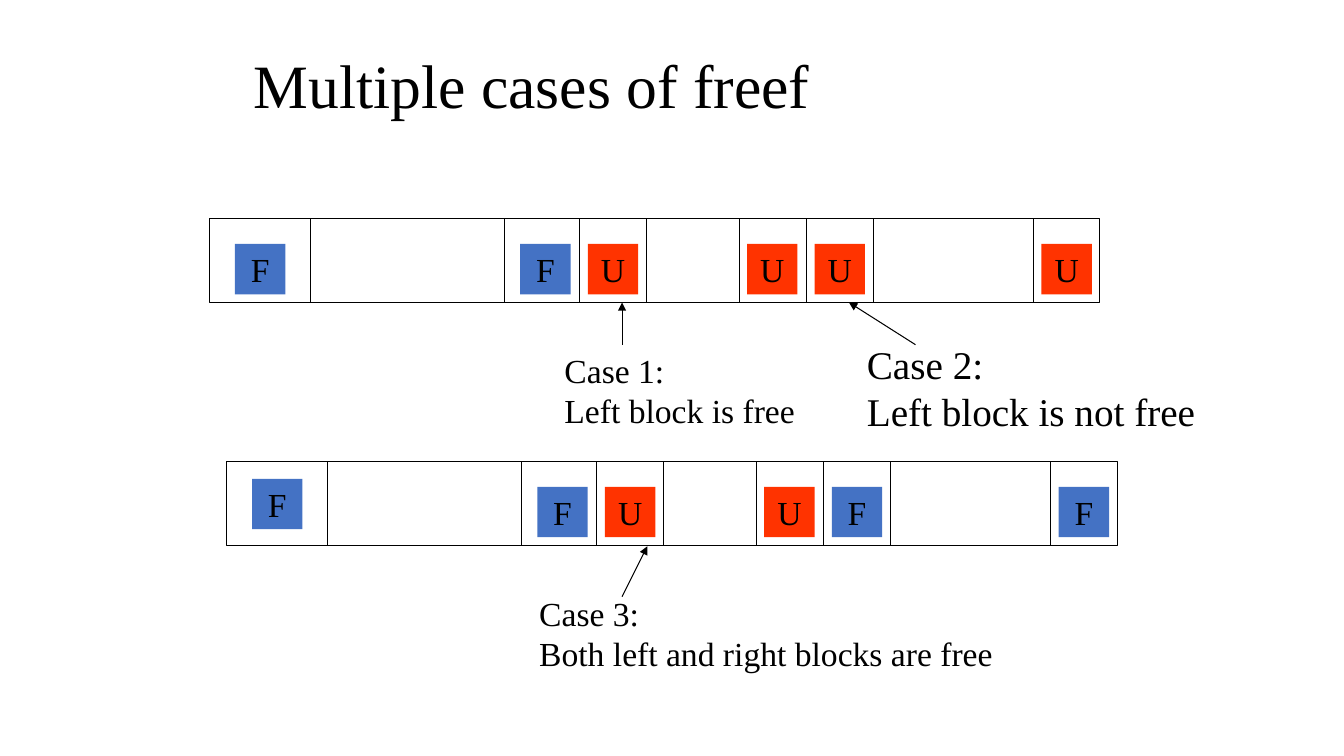
from dataclasses import dataclass

from pptx import Presentation
from pptx import util as u
from pptx.dml.color import RGBColor
from pptx.enum import shapes, text
from pptx.oxml.ns import qn
from lxml import etree


@dataclass(frozen=True)
class Theme:
    font: str = "Times New Roman"
    ink: str = "000000"
    paper: str = "FFFFFF"
    free: str = "4472C4"
    used: str = "FF3300"
    title: int = 44
    large: int = 28
    body: int = 24
    line: float = 0.75


class Deck:
    """Draws memory rows, arrows and labels on one slide in a shared style."""

    def __init__(self, theme):
        self.theme = theme
        self.show = Presentation()
        self.show.slide_width = u.Inches(13.33)
        self.show.slide_height = u.Inches(7.5)
        self.slide = self.show.slides.add_slide(self.show.slide_layouts[6])

    def words(self, frame, copy, size, align=text.PP_ALIGN.LEFT):
        frame.text = copy
        for para in frame.paragraphs:
            para.alignment = align
            para.font.name = self.theme.font
            para.font.size = u.Pt(size)
            para.font.color.rgb = RGBColor.from_string(self.theme.ink)

    def title(self, copy, *area):
        box = self.slide.shapes.add_textbox(*map(u.Inches, area))
        frame = box.text_frame
        frame.word_wrap = True
        frame.vertical_anchor = text.MSO_ANCHOR.MIDDLE
        self.words(frame, copy, self.theme.title)
        frame.paragraphs[0].line_spacing = 0.9

    def label(self, copy, size, *area):
        box = self.slide.shapes.add_textbox(*map(u.Inches, area))
        frame = box.text_frame
        frame.word_wrap = False
        frame.auto_size = text.MSO_AUTO_SIZE.SHAPE_TO_FIT_TEXT
        self.words(frame, copy, size)

    def rect(self, fill, *area):
        box = self.slide.shapes.add_shape(
            shapes.MSO_SHAPE.RECTANGLE, *map(u.Inches, area))
        box.shadow.inherit = False
        box.fill.solid()
        box.fill.fore_color.rgb = RGBColor.from_string(fill)
        return box

    def line(self, *ends, arrow=False):
        link = self.slide.shapes.add_connector(
            shapes.MSO_CONNECTOR.STRAIGHT, *map(u.Inches, ends))
        self.stroke(link)
        props = link._element.spPr
        if arrow:
            etree.SubElement(props.find(qn("a:ln")),
                             qn("a:tailEnd"), type="triangle")
        etree.SubElement(props, qn("a:effectLst"))

    def stroke(self, item):
        item.line.color.rgb = RGBColor.from_string(self.theme.ink)
        item.line.width = u.Pt(self.theme.line)

    def tag(self, letter, left, top):
        fill = self.theme.free if letter == "F" else self.theme.used
        box = self.rect(fill, left, top, 0.5, 0.5)
        box.line.fill.background()
        frame = box.text_frame
        frame.word_wrap = True
        frame.vertical_anchor = text.MSO_ANCHOR.TOP
        frame.auto_size = text.MSO_AUTO_SIZE.SHAPE_TO_FIT_TEXT
        self.words(frame, letter, self.theme.body, text.PP_ALIGN.CENTER)

    def row(self, left, top, letters, lift=0):
        wide, high = 8.83, 0.83
        self.stroke(self.rect(self.theme.paper, left, top, wide, high))
        for step in (1, 2.92, 3.67, 4.33, 5.25, 5.92, 6.58, 8.17):
            self.line(left + step, top, left + step, top + high)
        steps = (0.25, 3.08, 3.75, 5.33, 6, 8.25)
        for num, (step, letter) in enumerate(zip(steps, letters)):
            rise = 0 if num else lift
            self.tag(letter, left + step, top + 0.25 - rise)


def main():
    theme = Theme()
    deck = Deck(theme)
    deck.title("Multiple cases of freef", 2.42, 0.25, 8.5, 1.25)
    deck.row(2.08, 2.17, "FFUUUU")
    deck.row(2.25, 4.58, "FFUUFF", lift=0.08)
    for ends in ((6.17, 3.42, 6.17, 3), (9.08, 3.42, 8.42, 3),
                 (6.17, 5.92, 6.42, 5.42)):
        deck.line(*ends, arrow=True)
    deck.label("Case 1:\nLeft block is free", theme.body,
               5.5, 3.42, 2.51, 0.91)
    deck.label("Case 2:\nLeft block is not free", theme.large,
               8.5, 3.33, 3.46, 1.03)
    deck.label("Case 3:\nBoth left and right blocks are free", theme.body,
               5.25, 5.83, 4.74, 0.91)
    deck.show.save("out.pptx")


if __name__ == "__main__":
    main()
